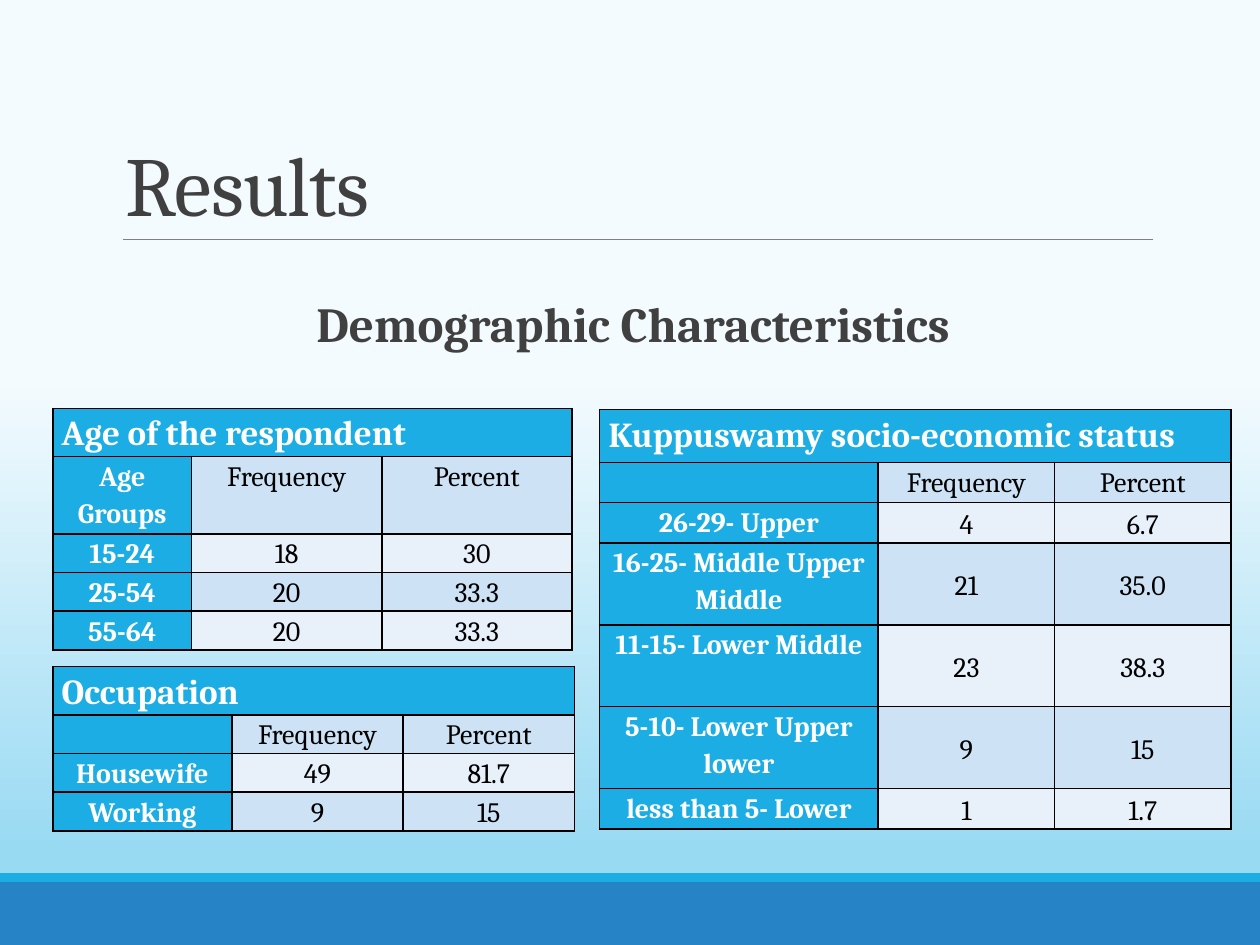
from lxml.etree import SubElement
from pptx import Presentation
from pptx.dml.color import RGBColor
from pptx.enum.shapes import MSO_CONNECTOR as Connector, MSO_SHAPE as Shape
from pptx.enum.text import MSO_ANCHOR as Anchor, PP_ALIGN as Align
from pptx.oxml.ns import qn
from pptx.util import Inches, Pt


def rgb(value):
    return RGBColor.from_string(value)


class Slide:
    font = "Cambria"
    dark, white, black = "404040", "FFFFFF", "000000"
    blue, accent, rule = "2683C6", "1CADE4", "808080"
    bands = ("CDE3F5", "E8F1FA")

    def __init__(self, deck):
        self.page = deck.slides.add_slide(deck.slide_layouts[6])

    def background(self, stops):
        fill = self.page.background.fill
        fill.gradient()
        fill.gradient_angle = 270
        for stop, (position, color) in zip(fill.gradient_stops, stops):
            stop.position = position
            stop.color.rgb = rgb(color)

    def bar(self, top, height, color):
        bar = self.page.shapes.add_shape(
            Shape.RECTANGLE, 0, Inches(top), Inches(10), Inches(height))
        bar.shadow.inherit = False
        bar.fill.solid()
        bar.fill.fore_color.rgb = rgb(color)
        bar.line.fill.background()

    def line(self, left, right, y):
        line = self.page.shapes.add_connector(
            Connector.STRAIGHT, Inches(left), Inches(y), Inches(right), Inches(y))
        line.line.color.rgb = rgb(self.rule)
        line.line.width = Pt(0.5)
        SubElement(line._element.spPr, qn("a:effectLst"))

    def add_span(self, para, text, size, color, bold=False):
        span = para.add_run()
        span.text = text
        span.font.name = self.font
        span.font.size = Pt(size)
        span.font.bold = bold
        span.font.color.rgb = rgb(color)
        return span

    def text_frame(self, top, height):
        box = self.page.shapes.add_textbox(
            Inches(0.9), Inches(top), Inches(8.25), Inches(height))
        box.text_frame.word_wrap = True
        return box.text_frame

    def title(self, text):
        frame = self.text_frame(0.31, 1.59)
        frame.vertical_anchor = Anchor.BOTTOM
        para = frame.paragraphs[0]
        para.line_spacing = 0.85
        span = self.add_span(para, text, 48, self.dark)
        span.font._element.set("spc", "-50")

    def subtitle(self, text):
        frame = self.text_frame(2.33, 0.79)
        frame.margin_left = frame.margin_right = 0
        para = frame.paragraphs[0]
        para.alignment = Align.CENTER
        para.line_spacing = 0.9
        para.space_before, para.space_after = Pt(12), Pt(2)
        properties = para._p.get_or_add_pPr()
        properties.set("marL", str(Inches(0.1)))
        properties.set("indent", str(Inches(-0.1)))
        self.add_span(para, text, 28, self.dark, bold=True)

    def cell(self, cell, text, fill, color, size=16, align=Align.CENTER, anchor=Anchor.TOP):
        cell.margin_left = cell.margin_right = Inches(0.07)
        cell.margin_top = cell.margin_bottom = 0
        cell.vertical_anchor = anchor
        properties = cell._tc.get_or_add_tcPr()
        for side in ("a:lnL", "a:lnR", "a:lnT", "a:lnB"):
            border = SubElement(properties, qn(side), w=str(Pt(1)))
            solid = SubElement(border, qn("a:solidFill"))
            SubElement(solid, qn("a:srgbClr"), val=self.black)
        cell.fill.solid()
        cell.fill.fore_color.rgb = rgb(fill)
        para = cell.text_frame.paragraphs[0]
        para.alignment = align
        para.line_spacing = 1.15
        if text:
            self.add_span(para, text, size, color, bold=color == self.white)
        else:
            SubElement(para._p, qn("a:endParaRPr"), sz=str(size * 100))

    def table(self, left, top, widths, heights, heading, rows, anchor=Anchor.TOP):
        """Draw a heading across all columns, then labelled, banded rows."""
        table = self.page.shapes.add_table(
            len(heights), len(widths), Inches(left), Inches(top),
            Inches(sum(widths)), Inches(sum(heights))).table
        for column, width in zip(table.columns, widths):
            column.width = Inches(width)
        for row, height in zip(table.rows, heights):
            row.height = Inches(height)
        table.cell(0, 0).merge(table.cell(0, len(widths) - 1))
        for c in range(len(widths)):
            self.cell(table.cell(0, c), "" if c else heading, self.accent,
                      self.white, 20, Align.LEFT)
        for r, (label, *values) in enumerate(rows, 1):
            self.cell(table.cell(r, 0), label, self.accent, self.white)
            for c, value in enumerate(values, 1):
                self.cell(table.cell(r, c), value, self.bands[(r - 1) % 2], self.black,
                          anchor=anchor if r > 1 else Anchor.TOP)


def main():
    deck = Presentation()
    deck.slide_width, deck.slide_height = Inches(10), Inches(7.5)
    slide = Slide(deck)
    slide.background([(0.4, "F4FBFE"), (0.9, "99DAF3")])
    slide.bar(7, 0.5, slide.blue)
    slide.bar(6.93, 0.07, slide.accent)
    slide.line(0.98, 9.15, 1.9)
    slide.title("Results")
    slide.subtitle("Demographic Characteristics")

    measures = ("Frequency", "Percent")
    slide.table(
        4.76, 3.25, [2.21, 1.4, 1.4], [0.42, 0.32, 0.32, 0.65, 0.65, 0.65, 0.32],
        "Kuppuswamy socio-economic status",
        [("", *measures),
         ("26-29- Upper", "4", "6.7"),
         ("16-25- Middle Upper Middle", "21", "35.0"),
         ("11-15- Lower Middle", "23", "38.3"),
         ("5-10- Lower Upper lower", "9", "15"),
         ("less than 5- Lower", "1", "1.7")],
        anchor=Anchor.MIDDLE)
    slide.table(
        0.42, 3.24, [1.1, 1.51, 1.51], [0.38, 0.59, 0.29, 0.29, 0.29],
        "Age of the respondent",
        [("Age Groups", *measures),
         ("15-24", "18", "30"),
         ("25-54", "20", "33.3"),
         ("55-64", "20", "33.3")])
    slide.table(
        0.42, 5.29, [1.42, 1.36, 1.36], [0.38, 0.29, 0.29, 0.29],
        "Occupation",
        [("", *measures),
         ("Housewife", "49", "81.7"),
         ("Working", "9", "15")])
    deck.save("out.pptx")


if __name__ == "__main__":
    main()
